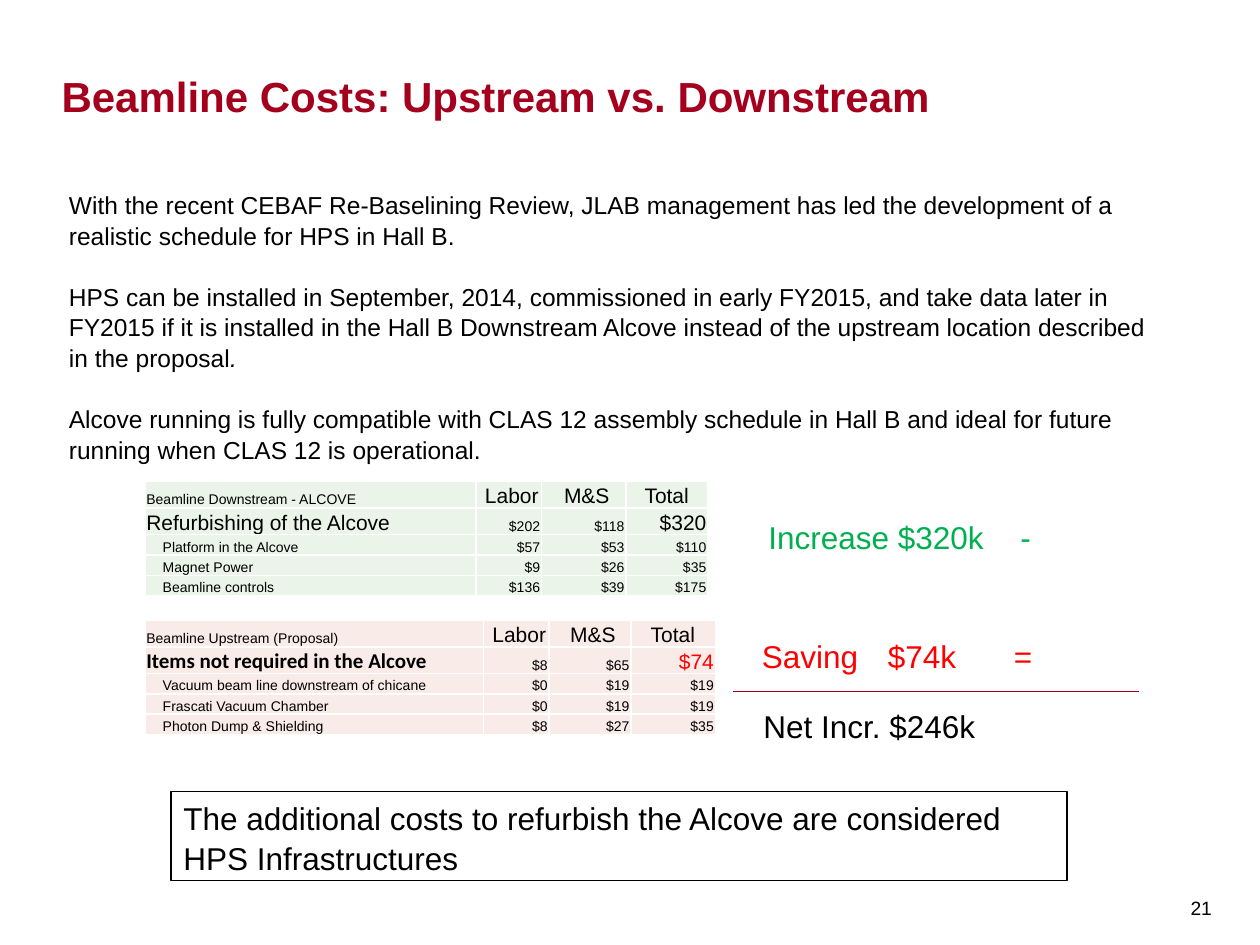
"""Build the beamline cost comparison slide."""
from dataclasses import dataclass

from pptx import Presentation
from pptx.dml.color import RGBColor
from pptx.enum.shapes import MSO_CONNECTOR as Connector, MSO_SHAPE as Preset
from pptx.enum.text import MSO_ANCHOR as Anchor, MSO_AUTO_SIZE as Fit, PP_ALIGN as Align
from pptx.oxml import parse_xml
from pptx.oxml.ns import nsdecls
from pptx.util import Cm, Pt


@dataclass(frozen=True)
class Theme:
    """Fonts, colours and type sizes of the deck."""
    font: str = "Arial"
    accent_font: str = "Calibri"
    black: str = "000000"
    white: str = "FFFFFF"
    title_red: str = "A4001D"
    rule_red: str = "A0001C"
    red: str = "FF0000"
    green: str = "00B050"
    pale_green: str = "EBF4E8"
    pale_red: str = "F9EBE7"
    title: int = 24
    large: int = 18
    body: int = 14
    heading: int = 12
    number: int = 11
    small: int = 8
    leading: float = 1.05
    gap: int = 17


PARAGRAPHS = [
    ["With the recent CEBAF Re-Baselining Review, JLAB management has led the "
     "development of a realistic schedule for HPS in Hall B."],
    ["HPS can be installed in September, 2014, commissioned in early FY2015, and take "
     "data later in FY2015 if it is installed in the Hall B Downstream Alcove instead "
     "of the upstream location described in the proposal", "."],
    ["Alcove running is fully compatible with CLAS 12 assembly schedule in Hall B and "
     "ideal for future running when CLAS 12 is operational."],
]
HEADINGS = [" Labor", " M&S", " Total "]
DOWNSTREAM = [
    ["Beamline Downstream - ALCOVE", *HEADINGS],
    ["Refurbishing of the Alcove", "$202", "$118", "$320"],
    ["Platform in the Alcove", "$57", "$53", "$110"],
    ["Magnet Power", "$9", "$26", "$35"],
    ["Beamline controls", "$136", "$39", "$175"],
]
UPSTREAM = [
    ["Beamline Upstream (Proposal)", *HEADINGS],
    ["Items not required in the Alcove", "$8", "$65", "$74"],
    ["Vacuum beam line downstream of chicane", "$0", "$19", "$19"],
    ["Frascati Vacuum Chamber", "$0", "$19", "$19"],
    ["Photon Dump & Shielding", "$8", "$27", "$35"],
]
LARGE_CELLS = {(0, 1), (0, 2), (0, 3), (1, 0), (1, 3)}


class Page:
    """Holds the theme and the current slide, and draws elements on it."""

    def __init__(self, deck, theme):
        """Add a title-only slide to the deck."""
        self.theme = theme
        self.slide = deck.slides.add_slide(deck.slide_layouts[5])

    def style(self, para, size, color, bold=False, font=None):
        """Set the font of a whole paragraph."""
        para.font.name = font or self.theme.font
        para.font.size = Pt(size)
        para.font.bold = bold
        para.font.color.rgb = RGBColor.from_string(color)

    def title(self, text, left, top, width, height):
        """Place and format the title placeholder."""
        box = self.slide.shapes.title
        box.left, box.top, box.width, box.height = map(Cm, (left, top, width, height))
        frame = box.text_frame
        frame.text = text
        frame.auto_size = Fit.NONE
        frame.vertical_anchor = Anchor.BOTTOM
        frame.margin_left = frame.margin_right = frame.margin_top = frame.margin_bottom = 0
        para = frame.paragraphs[0]
        para.alignment = Align.LEFT
        self.style(para, self.theme.title, self.theme.title_red, bold=True)

    def body(self, paragraphs, left, top, width, height):
        """Add running text whose second span, if any, is italic."""
        box = self.slide.shapes.add_textbox(*map(Cm, (left, top, width, height)))
        frame = box.text_frame
        frame.word_wrap = True
        for index, texts in enumerate(paragraphs):
            para = frame.add_paragraph() if index else frame.paragraphs[0]
            para.line_spacing = self.theme.leading
            if index:
                para.space_before = Pt(self.theme.gap)
            self.style(para, self.theme.body, self.theme.black)
            for place, text in enumerate(texts):
                span = para.add_run()
                span.text = text
                if place:
                    span.font.italic = True

    def panel(self, text, left, top, width, height, color, fill=None, line=None):
        """Add a rectangle with large left-aligned text."""
        box = self.slide.shapes.add_shape(
            Preset.RECTANGLE, *map(Cm, (left, top, width, height)))
        box.shadow.inherit = False
        if fill:
            box.fill.solid()
            box.fill.fore_color.rgb = RGBColor.from_string(fill)
        else:
            box.fill.background()
        if line:
            box.line.color.rgb = RGBColor.from_string(line)
            box.line.width = Pt(0.75)
        else:
            box.line.fill.background()
        frame = box.text_frame
        frame.word_wrap = True
        frame.auto_size = Fit.SHAPE_TO_FIT_TEXT
        frame.vertical_anchor = Anchor.TOP
        para = frame.paragraphs[0]
        para.text = text
        para.alignment = Align.LEFT
        para.line_spacing = self.theme.leading
        self.style(para, self.theme.large, color)

    def rule(self, left, right, top):
        """Add a horizontal line."""
        line = self.slide.shapes.add_connector(
            Connector.STRAIGHT, Cm(left), Cm(top), Cm(right), Cm(top))
        line.line.color.rgb = RGBColor.from_string(self.theme.rule_red)
        line.line.width = Pt(0.75)
        line._element.spPr.append(parse_xml(f"<a:effectLst {nsdecls('a')}/>"))

    def borders(self, cell):
        """Draw thin white borders around a cell."""
        for place, side in enumerate(("lnL", "lnR", "lnT", "lnB")):
            cell._tc.get_or_add_tcPr().insert(place, parse_xml(
                f'<a:{side} {nsdecls("a")} w="12700"><a:solidFill>'
                f'<a:srgbClr val="{self.theme.white}"/></a:solidFill></a:{side}>'))

    def table(self, rows, left, top, widths, heights, fill, special):
        """Add a cost table; special maps a cell place to extra font settings."""
        grid = self.slide.shapes.add_table(
            len(rows), len(widths), Cm(left), Cm(top),
            Cm(sum(widths)), Cm(sum(heights))).table
        grid.first_row = grid.horz_banding = False
        for column, width in zip(grid.columns, widths):
            column.width = Cm(width)
        for r, row in enumerate(rows):
            grid.rows[r].height = Cm(heights[r])
            for c, text in enumerate(row):
                cell = grid.cell(r, c)
                cell.fill.solid()
                cell.fill.fore_color.rgb = RGBColor.from_string(fill)
                cell.vertical_anchor = Anchor.BOTTOM
                cell.margin_left = Cm(0.36 if r > 1 and c == 0 else 0.03)
                cell.margin_right = cell.margin_top = Cm(0.03)
                cell.margin_bottom = 0
                self.borders(cell)
                para = cell.text_frame.paragraphs[0]
                para.text = text
                para.alignment = Align.LEFT if c == 0 else Align.RIGHT if r else Align.CENTER
                size = self.theme.heading if (r, c) in LARGE_CELLS else self.theme.small
                self.style(para, size, **{"color": self.theme.black, **special.get((r, c), {})})

    def number(self, text, left, top, width, height):
        """Add the page number."""
        box = self.slide.shapes.add_textbox(*map(Cm, (left, top, width, height)))
        frame = box.text_frame
        frame.word_wrap = True
        frame.vertical_anchor = Anchor.MIDDLE
        frame.margin_left = frame.margin_right = Cm(0.2)
        para = frame.paragraphs[0]
        para.text = text
        self.style(para, self.theme.number, self.theme.black)


def main():
    """Build and save the deck."""
    theme = Theme()
    deck = Presentation()
    deck.slide_width, deck.slide_height = Cm(25.4), Cm(19.05)
    page = Page(deck, theme)
    page.number("21", 23.8, 17.55, 0.89, 1.5)
    page.title("Beamline Costs: Upstream vs. Downstream", 1.24, 0.36, 22.5, 2.08)
    page.table(DOWNSTREAM, 2.92, 9.7, [6.68, 1.32, 1.7, 1.65],
               [0.41, 0.48, 0.41, 0.41, 0.41], theme.pale_green, {})
    page.table(UPSTREAM, 2.92, 12.5, [6.83, 1.32, 1.65, 1.7], [0.41] * 5, theme.pale_red,
               {(1, 0): {"bold": True, "font": theme.accent_font},
                (1, 3): {"color": theme.red}})
    page.panel("Saving \t$74k\t=", 15.11, 12.67, 9.32, 1.02, theme.red, theme.white)
    page.panel("Increase $320k\t-", 15.24, 10.29, 9.32, 1.02, theme.green, theme.white)
    page.body(PARAGRAPHS, 1.14, 3.68, 22.56, 5.64)
    page.rule(14.78, 22.96, 13.94)
    page.panel("Net Incr. $246k", 15.14, 14.1, 5.31, 1.02, theme.black, theme.white)
    page.panel("The additional costs to refurbish the Alcove are considered HPS "
               "Infrastructures", 3.45, 15.95, 18.06, 1.8, theme.black, line=theme.black)
    deck.save("out.pptx")


if __name__ == "__main__":
    main()
